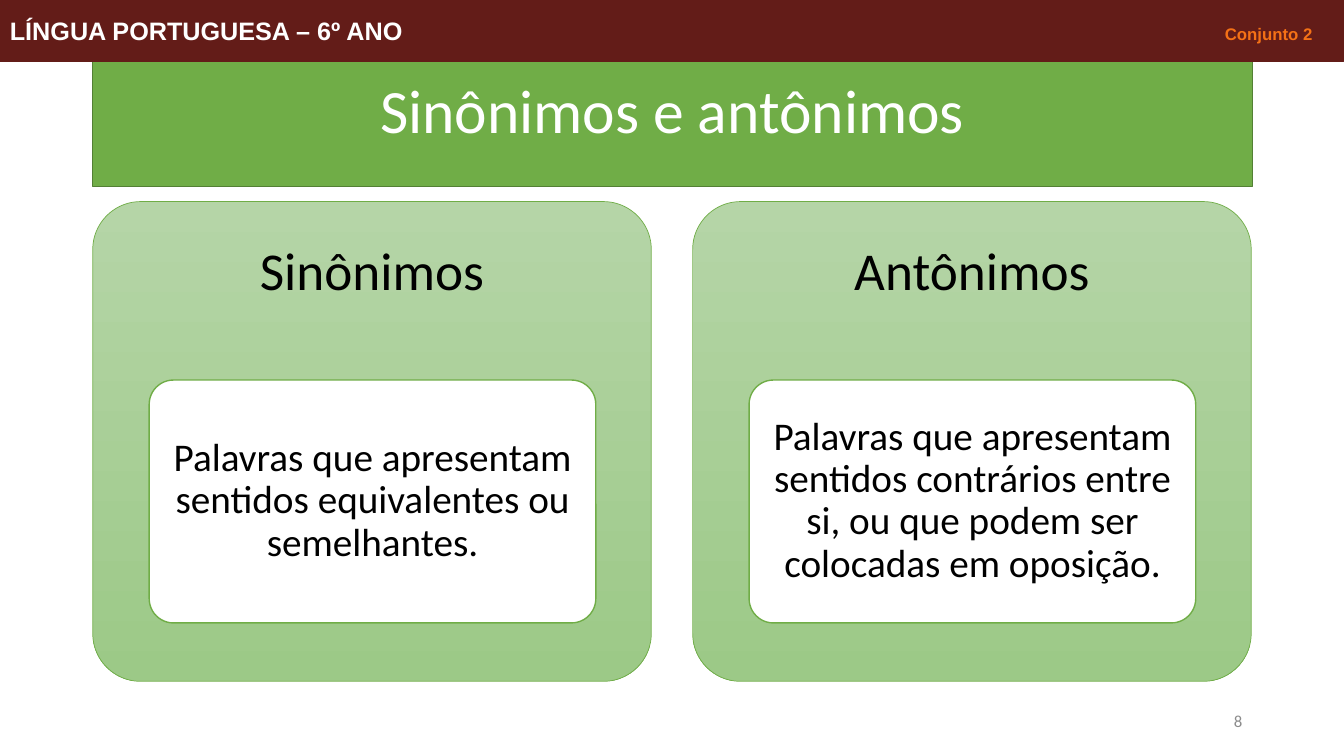
"""Build the slide on synonyms and antonyms."""
from pptx import Presentation
from pptx.dml.color import RGBColor
from pptx.enum import shapes, text
from pptx.oxml import ns
from pptx.util import Inches, Pt
from lxml import etree

WHITE = RGBColor(0xFF, 0xFF, 0xFF)
BLACK = RGBColor(0, 0, 0)
GREEN = RGBColor(0x70, 0xAD, 0x47)
DARK_GREEN = RGBColor(0x53, 0x80, 0x35)
CARD_TOP = RGBColor(0xB5, 0xD5, 0xA7)
CARD_BOTTOM = RGBColor(0x9C, 0xC9, 0x87)
MAROON = RGBColor(0x63, 0x1C, 0x18)
ORANGE = RGBColor(0xF4, 0x71, 0x16)
GREY = RGBColor(0x8C, 0x8C, 0x8C)
CENTER, RIGHT, LEFT = text.PP_ALIGN.CENTER, text.PP_ALIGN.RIGHT, text.PP_ALIGN.LEFT


def write(sp, runs, align, spacing=1.0, inset=(0.1, 0.05)):
    tf = sp.text_frame
    x, y = map(Inches, inset)
    frame = {"word_wrap": True, "auto_size": text.MSO_AUTO_SIZE.NONE,
             "vertical_anchor": text.MSO_ANCHOR.MIDDLE,
             "margin_left": x, "margin_right": x, "margin_top": y, "margin_bottom": y}
    for name, value in frame.items():
        setattr(tf, name, value)
    p = tf.paragraphs[0]
    p.alignment, p.line_spacing = align, spacing
    for words, size, color, font, bold in runs:
        r = p.add_run()
        r.text = words
        for name, value in {"size": Pt(size), "name": font, "bold": bold}.items():
            setattr(r.font, name, value)
        r.font.color.rgb = color
    return p


def add_box(parent, kind, at, line, width, fill=None):
    sp = parent.add_shape(kind, *map(Inches, at))
    sp.shadow.inherit = False
    sp.line.color.rgb, sp.line.width = line, Pt(width)
    if fill is not None:
        sp.fill.solid()
        sp.fill.fore_color.rgb = fill
    return sp


prs = Presentation()
prs.slide_width, prs.slide_height = Inches(13.33), Inches(7.5)
slide = prs.slides.add_slide(prs.slide_layouts[5])

title = slide.shapes.title
place = {"left": 0.92, "top": 0.4, "width": 11.5, "height": 1.45}
for name, value in place.items():
    setattr(title, name, Inches(value))
title.fill.solid()
title.fill.fore_color.rgb = GREEN
title.line.color.rgb, title.line.width = DARK_GREEN, Pt(1)
write(title, [("Sinônimos e antônimos", 44, WHITE, "Calibri", False)], CENTER, 0.9)

cards = [
    ("Sinônimos", "Palavras que apresentam sentidos equivalentes ou semelhantes."),
    ("Antônimos", "Palavras que apresentam sentidos contrários entre si, "
                  "ou que podem ser colocadas em oposição."),
]
rounded = shapes.MSO_SHAPE.ROUNDED_RECTANGLE
group = slide.shapes.add_group_shape().shapes
for i, (heading, meaning) in enumerate(cards):
    left = 0.92 + 5.95 * i
    card = add_box(group, rounded, (left, 2, 5.54, 4.76), GREEN, 0.5)
    card.fill.gradient()
    card.fill.gradient_angle = 270
    for stop, color in zip(card.fill.gradient_stops, (CARD_TOP, CARD_BOTTOM)):
        stop.color.rgb = color
    head = group.add_textbox(*map(Inches, (left, 2, 5.54, 1.43)))
    write(head, [(heading, 38, BLACK, "Calibri", False)], CENTER, 0.9, (0.16, 0.16))
    panel = add_box(group, rounded, (left + 0.56, 3.77, 4.43, 2.41), GREEN, 1, WHITE)
    for sp in (card, panel):
        sp.adjustments[0] = 0.1
    body = group.add_textbox(*map(Inches, (left + 0.63, 3.84, 4.29, 2.26)))
    write(body, [(meaning, 28, BLACK, "Calibri", False)], CENTER, 0.9, (0.08, 0.06))

number = slide.shapes.add_textbox(*map(Inches, (9.42, 6.95, 3, 0.4)))
write(number, [("8", 12, GREY, "Calibri", False)], RIGHT)

header = add_box(slide.shapes, shapes.MSO_SHAPE.RECTANGLE, (0, 0, 13.33, 0.61),
                 MAROON, 0.75, MAROON)
p = write(header, [("LÍNGUA PORTUGUESA – 6º ANO\t", 18, WHITE, "Arial", True),
                   ("Conjunto 2", 12, ORANGE, "Arial", True)], LEFT)
tabs = etree.SubElement(p._p.get_or_add_pPr(), ns.qn("a:tabLst"))
etree.SubElement(tabs, ns.qn("a:tab"), pos=str(Inches(12.05)), algn="l")

prs.save("out.pptx")
